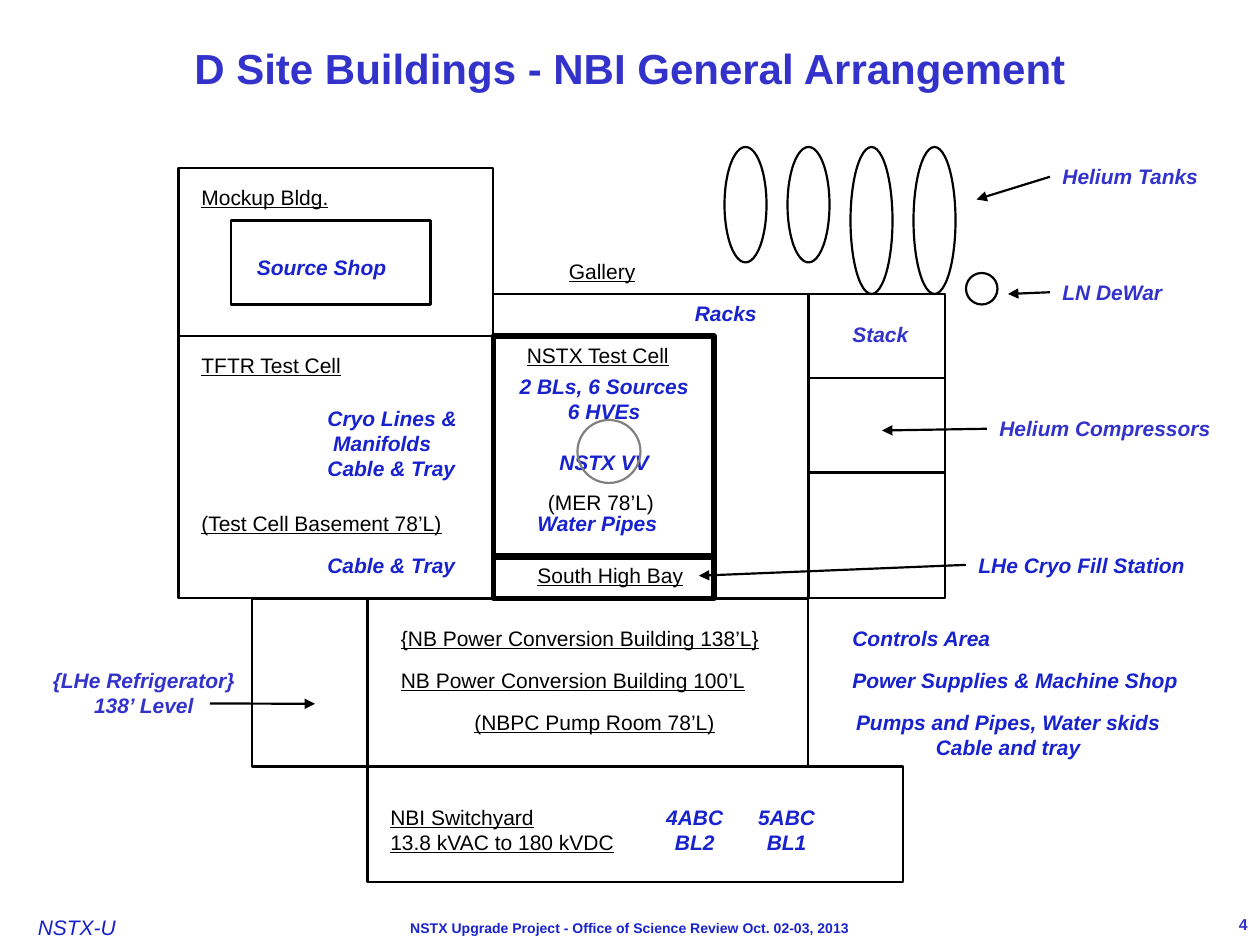
from lxml import etree
from pptx import Presentation
from pptx import util as u
from pptx.dml.color import RGBColor
from pptx.enum import shapes, text
from pptx.oxml.ns import qn

BLACK = RGBColor(0x00, 0x00, 0x00)
GREY = RGBColor(0x80, 0x80, 0x80)
BLUE = RGBColor(0x18, 0x22, 0xCD)
LOGO = RGBColor(0x17, 0x1F, 0xC7)
INDIGO = RGBColor(0x33, 0x33, 0xCC)

RECT = shapes.MSO_SHAPE.RECTANGLE
OVAL = shapes.MSO_SHAPE.OVAL
LEFT = text.PP_ALIGN.LEFT
MID = text.PP_ALIGN.CENTER
RIGHT = text.PP_ALIGN.RIGHT


def write(frame, words, size=12, color=BLACK, bold=False, italic=False,
          under=False, align=LEFT, gaps=None, shifts=None):
    """Fill a frame, one paragraph a line; gaps and shifts go by line index."""
    for i, line in enumerate(words.split("\n")):
        para = frame.paragraphs[0] if i == 0 else frame.add_paragraph()
        para.alignment = align
        if gaps and i in gaps:
            para.space_before = u.Pt(gaps[i])
        if shifts and i in shifts:
            para._p.get_or_add_pPr().set("marL", str(u.Pt(shifts[i])))
        run = para.add_run()
        run.text = line
        font = run.font
        font.name, font.size = "Arial", u.Pt(size)
        font.bold, font.italic, font.underline = bold, italic, under
        font.color.rgb = color


class Plan:
    """Drawing style and current slide; all lengths are in points."""

    def __init__(self, slide):
        self.slide = slide
        self.width = 1.25

    def title(self, words, x, y, w, h):
        box = self.slide.shapes.title
        box.left, box.top, box.width, box.height = map(u.Pt, (x, y, w, h))
        self.inset(box.text_frame, 0)
        box.text_frame.vertical_anchor = text.MSO_ANCHOR.MIDDLE
        box.text_frame.auto_size = text.MSO_AUTO_SIZE.NONE
        write(box.text_frame, words, size=24, color=INDIGO, bold=True, align=MID)

    def inset(self, frame, size):
        frame.margin_left = frame.margin_right = u.Pt(size)
        frame.margin_top = frame.margin_bottom = u.Pt(size)

    def label(self, words, x, y, w, h=21.6, wrap=False, inset=None, **style):
        box = self.slide.shapes.add_textbox(*map(u.Pt, (x, y, w, h)))
        frame = box.text_frame
        frame.word_wrap = wrap
        frame.auto_size = text.MSO_AUTO_SIZE.SHAPE_TO_FIT_TEXT
        if inset is not None:
            self.inset(frame, inset)
        write(frame, words, **style)

    def room(self, words, x, y, w, h=21.6):
        self.label(words, x, y, w, h, under=True)

    def note(self, words, x, y, w, h=21.6, color=BLUE, **style):
        self.label(words, x, y, w, h, color=color, bold=True, italic=True, **style)

    def shape(self, kind, x, y, w, h, width=None, color=BLACK):
        item = self.slide.shapes.add_shape(kind, *map(u.Pt, (x, y, w, h)))
        item.shadow.inherit = False
        item.fill.background()
        item.line.color.rgb = color
        item.line.width = u.Pt(width or self.width)

    def line(self, x1, y1, x2, y2, width=None, arrow=False):
        item = self.slide.shapes.add_connector(
            shapes.MSO_CONNECTOR.STRAIGHT, *map(u.Pt, (x1, y1, x2, y2)))
        item.line.color.rgb = BLACK
        item.line.width = u.Pt(width or self.width)
        if arrow:
            tip = etree.SubElement(item.line._get_or_add_ln(), qn("a:tailEnd"))
            tip.set("type", "triangle")
        etree.SubElement(item._element.spPr, qn("a:effectLst"))


def main():
    deck = Presentation()
    deck.slide_width, deck.slide_height = u.Pt(720), u.Pt(540)
    plan = Plan(deck.slides.add_slide(deck.slide_layouts[5]))

    # Title and footer
    plan.title("D Site Buildings - NBI General Arrangement", 0, 24, 720, 28.8)
    plan.label("NSTX-U", 21.6, 522.7, 62.6, 14.4, inset=0, color=LOGO, italic=True)
    plan.label("NSTX Upgrade Project - Office of Science Review Oct. 02-03, 2013",
               144, 522, 432, 17.3, wrap=True, size=8, color=BLUE, bold=True,
               align=MID)
    plan.label("4", 660, 519, 60, 18, wrap=True, size=9, color=INDIGO,
               bold=True, align=RIGHT)

    # Buildings
    for box in ((102, 96, 180, 96), (102, 192, 180, 150), (144, 342, 318, 96),
                (210, 438, 306, 66), (462, 168, 78, 174), (132, 126, 114, 48)):
        plan.shape(RECT, *box)
    plan.shape(RECT, 282, 192, 126, 150, width=3)

    # Inner walls
    plan.line(282, 168, 462, 168)
    plan.line(462, 168, 462, 342)
    plan.line(282, 318, 408, 318, width=4)
    plan.line(210, 342, 210, 438)
    for y in (216, 270):
        plan.line(462, y, 540, y)

    # Tanks and dewar
    for i, high in enumerate((66, 66, 84, 84)):
        plan.shape(OVAL, 414 + 36 * i, 84, 24, high)
    plan.shape(OVAL, 552, 156, 18, 18)

    # Room names
    for name in (("Mockup Bldg.", 108, 102, 87.8),
                 ("TFTR Test Cell", 108, 198, 95),
                 ("(Test Cell Basement 78’L)", 108, 288, 153.4),
                 ("Gallery", 318, 144, 54),
                 ("NSTX Test Cell", 294, 192, 96.5),
                 ("South High Bay", 300, 318, 99.4),
                 ("{NB Power Conversion Building 138’L}", 222, 354, 221.8),
                 ("NB Power Conversion Building 100’L", 222, 378, 213.1),
                 ("(NBPC Pump Room 78’L)", 264, 402, 153.4),
                 ("NBI Switchyard\n13.8 kVAC to 180 kVDC", 216, 456, 144, 36)):
        plan.room(*name)
    plan.label("(MER 78’L)", 306, 276, 75.6)

    # Equipment outside the cells
    for name in (("Helium Tanks", 600, 90, 95), ("LN DeWar", 600, 156, 74.9),
                 ("Stack", 480, 180, 49.7),
                 ("Helium Compressors", 564, 234, 139)):
        plan.note(*name, color=INDIGO)
    plan.note("{LHe Refrigerator}\n138’ Level", 21, 378, 122.4, 36,
              color=INDIGO, align=MID)

    # Equipment inside the cells
    for name in (("Source Shop", 139.7, 141.8, 92.2), ("Racks", 390, 168, 52.6),
                 ("Cable & Tray", 180, 312, 90.7),
                 ("Water Pipes", 300, 288, 85.7),
                 ("LHe Cryo Fill Station", 552, 312, 136.1),
                 ("Controls Area", 480, 354, 96.5),
                 ("Power Supplies & Machine Shop", 480, 378, 205.2)):
        plan.note(*name)
    plan.note("Cryo Lines &\nManifolds\nCable & Tray", 180, 228, 92.2, 51,
              shifts={1: 3.3})
    for name in (("Pumps and Pipes, Water skids\nCable and tray", 480, 402, 192.2, 36),
                 ("4ABC\nBL2", 373, 456, 48, 36),
                 ("5ABC\nBL1", 425.5, 456, 48, 36)):
        plan.note(*name, align=MID)
    plan.note("2 BLs, 6 Sources\n6 HVEs\nNSTX VV", 288, 210, 114.5, 65.5,
              align=MID, gaps={2: 14.4})
    plan.shape(OVAL, 330, 240, 36, 36, color=GREY)

    # Pointers
    for ends in ((564, 245, 504, 246), (120, 402, 180, 402.2),
                 (552, 322.8, 399.4, 329), (600, 101, 558, 114),
                 (600, 167, 576, 168)):
        plan.line(*ends, arrow=True)

    deck.save("out.pptx")


if __name__ == "__main__":
    main()
